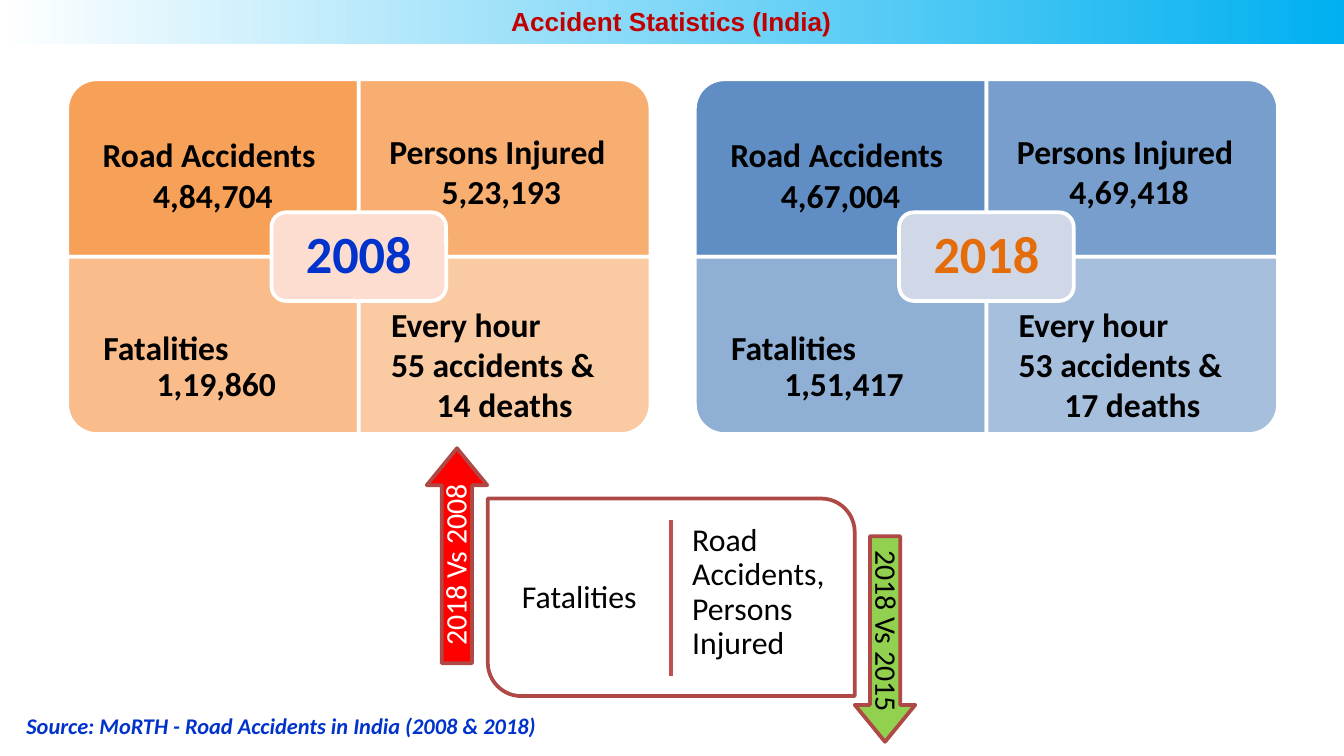
from dataclasses import dataclass

from lxml.etree import SubElement
from pptx import Presentation
from pptx.dml.color import RGBColor
from pptx.enum.shapes import MSO_CONNECTOR as Connector, MSO_SHAPE as Preset
from pptx.enum.text import MSO_ANCHOR as Anchor, PP_ALIGN as Align
from pptx.oxml.ns import qn
from pptx.util import Inches, Pt

QUADRANT_W, QUADRANT_H = 2.17, 1.32
BADGE_W, BADGE_H = 1.3, 0.66
PANEL_TOP = 0.59
BOLD_18 = {"name": "Calibri", "size": Pt(18), "bold": True}
PLAIN_17 = {"name": "Calibri", "size": Pt(17)}
PLAIN_16 = {"name": "Calibri", "size": Pt(16)}


@dataclass(frozen=True)
class Box:
    left: float
    top: float
    width: float
    height: float

    def lengths(self) -> list:
        return [Inches(v) for v in (self.left, self.top, self.width, self.height)]


@dataclass(frozen=True)
class Line:
    """One paragraph; an indent makes it left aligned."""
    text: str
    indent: float | None = None
    align: Align = Align.CENTER


@dataclass(frozen=True)
class Year:
    left: float
    label: str
    label_color: str
    badge_fill: str
    quadrant_fill: str
    accidents: str
    injured: str
    fatalities: str
    hourly_accidents: str
    hourly_deaths: str


@dataclass(frozen=True)
class Trend:
    arrow: Box
    caption: Box
    rotation: int
    fill: str
    text: str
    text_color: str


YEARS = [
    Year(0.5, "2008", "0033CC", "FCDDCF", "F79646",
         "4,84,704", "5,23,193", "1,19,860", "55 accidents &", "14 deaths"),
    Year(5.17, "2018", "E46C0A", "D0D8E8", "4F81BD",
         "4,67,004", "4,69,418", "1,51,417", "53 accidents &", "17 deaths"),
]
TRENDS = [
    Trend(Box(2.6, 3.91, 1.6, 0.45), Box(2.67, 4.09, 1.46, 0.23),
          270, "FF0000", "2018 Vs 2008", "FFFFFF"),
    Trend(Box(5.82, 4.53, 1.53, 0.45), Box(5.89, 4.58, 1.39, 0.23),
          90, "92D050", "2018 Vs 2015", "000000"),
]


def rgb(value: str) -> RGBColor:
    return RGBColor.from_string(value)


def write(shape, lines: list[Line], font: dict, color: str,
          inset: tuple[float, float] = (0.07, 0.07), spacing: float = 1.0,
          anchor: Anchor = Anchor.MIDDLE, wrap: bool = True) -> None:
    """Fill a shape with paragraphs; inset is horizontal, then vertical."""
    frame = shape.text_frame
    side, end = (Inches(v) for v in inset)
    layout = {"margin_left": side, "margin_right": side, "margin_top": end,
              "margin_bottom": end, "word_wrap": wrap, "vertical_anchor": anchor}
    for name, value in layout.items():
        setattr(frame, name, value)
    for number, line in enumerate(lines):
        paragraph = frame.add_paragraph() if number else frame.paragraphs[0]
        paragraph.line_spacing = spacing
        paragraph.alignment = line.align
        if line.indent is not None:
            paragraph.alignment = Align.LEFT
            paragraph._p.get_or_add_pPr().set("marL", str(Inches(line.indent)))
        run = paragraph.add_run()
        run.text = line.text
        for name, value in font.items():
            setattr(run.font, name, value)
        run.font.color.rgb = rgb(color)


def add_text(slide, box: Box, lines: list[Line], font: dict, color: str = "000000",
             rotation: int = 0, **layout) -> None:
    text_box = slide.shapes.add_textbox(*box.lengths())
    text_box.rotation = rotation
    write(text_box, lines, font, color, **layout)


def add_filled(slide, preset: Preset, box: Box, fill: str, outline: str,
               rotation: int = 0, adjustments: tuple = (), opacity: int = 100):
    shape = slide.shapes.add_shape(preset, *box.lengths())
    shape.shadow.inherit = False
    shape.rotation = rotation
    for index, value in enumerate(adjustments):
        shape.adjustments[index] = value
    shape.fill.solid()
    shape.fill.fore_color.rgb = rgb(fill)
    if opacity < 100:
        color = shape._element.spPr.find(qn("a:solidFill")).find(qn("a:srgbClr"))
        SubElement(color, qn("a:alpha")).set("val", str(opacity * 1000))
    shape.line.color.rgb = rgb(outline)
    shape.line.width = Pt(2)
    return shape


def add_header(slide) -> None:
    band = slide.shapes.add_shape(Preset.RECTANGLE, *Box(0, 0, 10, 0.33).lengths())
    band.shadow.inherit = False
    band.line.fill.background()
    band.fill.gradient()
    band.fill.gradient_angle = 180
    for stop, color in zip(band.fill.gradient_stops, ("00B0F0", "FFFFFF")):
        stop.color.rgb = rgb(color)
    add_text(slide, Box(3.7, 0.02, 2.59, 0.31), [Line("Accident Statistics (India)")],
             {"name": "Arial", "size": Pt(14), "bold": True}, "C00000",
             inset=(0.1, 0.05), spacing=0.9, anchor=Anchor.TOP, wrap=False)


def add_year(slide, year: Year) -> None:
    """Four quadrants, each with its outer corner rounded, around a year badge."""
    middle_x, middle_y = year.left + QUADRANT_W, PANEL_TOP + QUADRANT_H
    corners = [(0, 0, 270, 90), (1, 0, 0, 77), (0, 1, 180, 63), (1, 1, 90, 50)]
    for column, row, rotation, opacity in corners:
        width, height = QUADRANT_W, QUADRANT_H
        if rotation in (90, 270):
            width, height = height, width
        center_x = year.left + (column + 0.5) * QUADRANT_W
        center_y = PANEL_TOP + (row + 0.5) * QUADRANT_H
        add_filled(slide, Preset.ROUND_1_RECTANGLE,
                   Box(center_x - width / 2, center_y - height / 2, width, height),
                   year.quadrant_fill, "FFFFFF", rotation, opacity=opacity)

    facts = [
        (Box(year.left, 0.83, 2.17, 0.94),
         [Line("Road Accidents "), Line(year.accidents)], 1.0),
        (Box(middle_x, 0.78, 2.12, 0.99),
         [Line("Persons Injured "), Line(year.injured)], 1.0),
        (Box(year.left + 0.05, 2.24, 2.12, 0.99),
         [Line("Fatalities", 0.08), Line(year.fatalities)], 0.9),
        (Box(middle_x, 2.24, 2.17, 0.94),
         [Line("Every hour", 0.1), Line(year.hourly_accidents, 0.1),
          Line(year.hourly_deaths)], 1.0),
    ]
    for box, lines, spacing in facts:
        add_text(slide, box, lines, BOLD_18, inset=(0.14, 0.14), spacing=spacing)

    badge = add_filled(slide, Preset.ROUNDED_RECTANGLE,
                       Box(middle_x - BADGE_W / 2, middle_y - BADGE_H / 2, BADGE_W, BADGE_H),
                       year.badge_fill, "FFFFFF")
    write(badge, [Line(year.label)], {**BOLD_18, "size": Pt(28)}, year.label_color, spacing=0.9)


def add_comparison(slide) -> None:
    add_filled(slide, Preset.ROUND_2_DIAG_RECTANGLE, Box(3.63, 3.71, 2.73, 1.47),
               "FFFFFF", "AE4946", adjustments=(0, 0.17))
    divider = slide.shapes.add_connector(Connector.STRAIGHT, Inches(4.99), Inches(3.87),
                                         Inches(4.99), Inches(5.03))
    divider.line.color.rgb = rgb("C0504D")
    divider.line.width = Pt(2)
    SubElement(divider._element.spPr, qn("a:effectLst"))
    add_text(slide, Box(3.72, 3.83, 1.18, 1.24), [Line("Fatalities")], PLAIN_17, spacing=0.9)
    add_text(slide, Box(5.08, 3.83, 1.18, 1.24),
             [Line("Road Accidents, Persons Injured", 0)], PLAIN_17,
             spacing=0.9, anchor=Anchor.TOP)
    for trend in TRENDS:
        add_filled(slide, Preset.RIGHT_ARROW, trend.arrow, trend.fill, "AE4946",
                   trend.rotation, (0.5, 0.61))
        add_text(slide, trend.caption, [Line(trend.text)], PLAIN_16, trend.text_color,
                 trend.rotation, spacing=0.9)


def main() -> None:
    deck = Presentation()
    deck.slide_width = Inches(10)
    deck.slide_height = deck.slide_width * 9 // 16
    slide = deck.slides.add_slide(deck.slide_layouts[6])
    add_header(slide)
    for year in YEARS:
        add_year(slide, year)
    add_text(slide, Box(0, 5.25, 4.09, 0.3),
             [Line("Source: MoRTH - Road Accidents in India (2008 & 2018)", align=Align.RIGHT)],
             {**BOLD_18, "size": Pt(12), "italic": True}, "0033CC",
             inset=(0.1, 0.05), anchor=Anchor.TOP)
    add_comparison(slide)
    deck.save("out.pptx")


if __name__ == "__main__":
    main()
